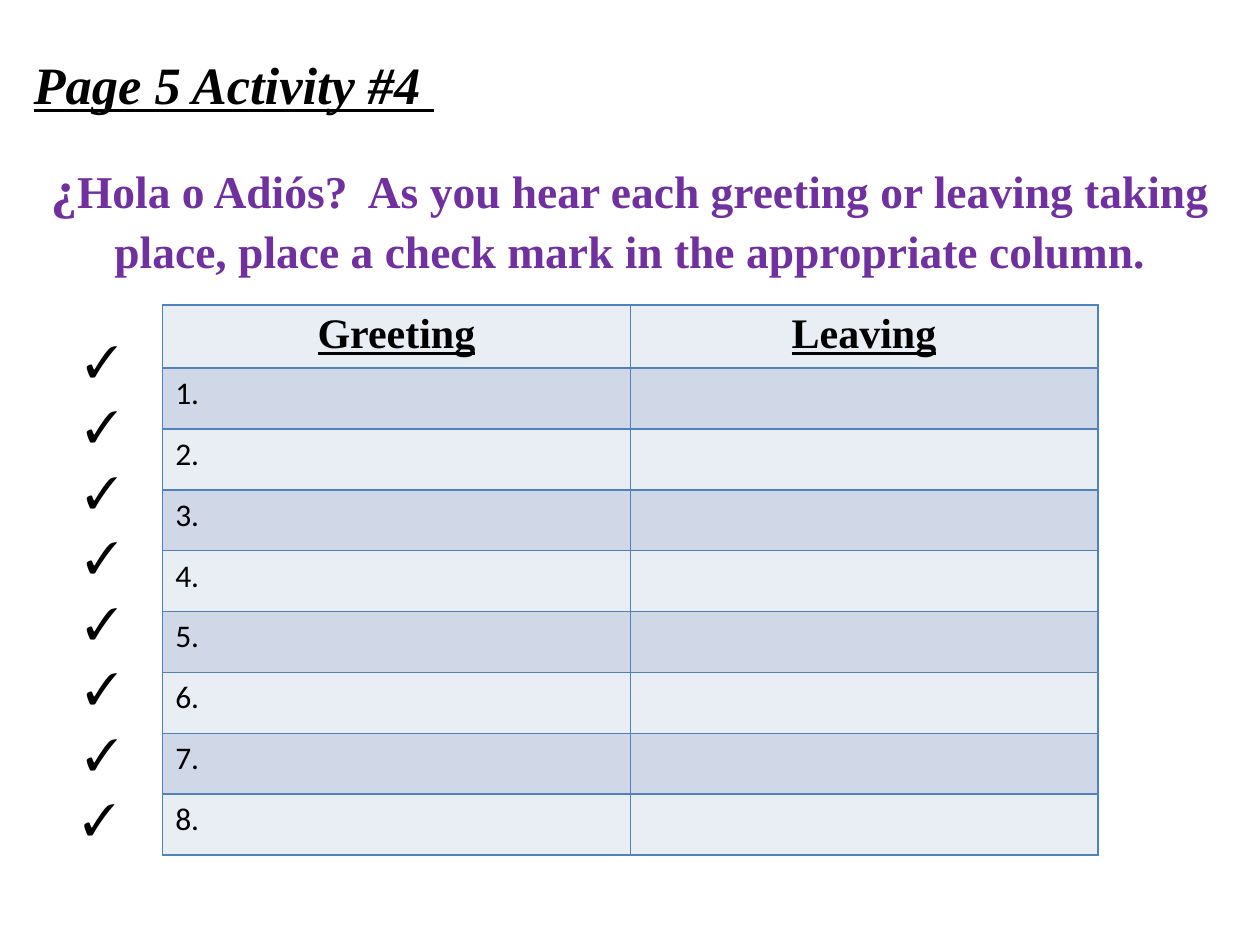
from pptx import Presentation
from pptx.dml.color import RGBColor
from pptx.enum.text import PP_ALIGN as Align
from pptx.oxml import parse_xml
from pptx.oxml.ns import nsdecls
from pptx.util import Cm, Pt

BLACK = RGBColor(0x00, 0x00, 0x00)
PURPLE = RGBColor(0x70, 0x30, 0xA0)
BORDER = RGBColor(0x4F, 0x81, 0xBD)
BANDS = RGBColor(0xE9, 0xED, 0xF4), RGBColor(0xD0, 0xD8, 0xE8)
SERIF = "Times New Roman"
QUESTIONS = 8
CHECK_STEP = 1.32


def style(span, size, color=BLACK, name=SERIF, bold=True, italic=False, underline=False):
    font = span.font
    font.size, font.name, font.color.rgb = Pt(size), name, color
    font.bold, font.italic, font.underline = bold, italic, underline


def add_heading(page, left, top, width, height):
    box = page.shapes.add_textbox(Cm(left), Cm(top), Cm(width), Cm(height))
    frame = box.text_frame
    frame.word_wrap = True
    frame.text = "Page 5 Activity #4 "
    title = frame.paragraphs[0]
    title.line_spacing = 1.07
    style(title.runs[0], 30, italic=True, underline=True)

    task = frame.add_paragraph()
    task.alignment = Align.CENTER
    task.line_spacing = 1.07
    task.space_before = Pt(21)
    for text, size in (
        ("¿", 30),
        ("Hola o Adiós?  As you hear each greeting or leaving taking place, "
         "place a check mark in the appropriate column.", 26),
    ):
        span = task.add_run()
        span.text = text
        style(span, size, PURPLE)


def add_borders(cell):
    """Draw a thin line on all four sides of the cell."""
    properties = cell._tc.get_or_add_tcPr()
    for index, side in enumerate(("lnL", "lnR", "lnT", "lnB")):
        properties.insert(index, parse_xml(
            f'<a:{side} {nsdecls("a")} w="{Pt(1)}"><a:solidFill>'
            f'<a:srgbClr val="{BORDER}"/></a:solidFill></a:{side}>'))


def add_answer_table(page, left, top, width, height):
    rows = [("Greeting", "Leaving")]
    rows += [(f"{number}.", "") for number in range(1, QUESTIONS + 1)]
    table = page.shapes.add_table(
        len(rows), 2, Cm(left), Cm(top), Cm(width), Cm(height)).table
    for row, texts in enumerate(rows):
        for column, text in enumerate(texts):
            cell = table.cell(row, column)
            cell.fill.solid()
            cell.fill.fore_color.rgb = BANDS[row % 2]
            add_borders(cell)
            para = cell.text_frame.paragraphs[0]
            para.text = text
            if row == 0:
                para.alignment = Align.CENTER
            for span in para.runs:
                if row == 0:
                    style(span, 24, underline=True)
                else:
                    style(span, 18, name="Calibri", bold=False)


def add_check_marks(page, left, top, width, height):
    for index in range(QUESTIONS):
        nudge = -0.05 if index == QUESTIONS - 1 else 0
        box = page.shapes.add_textbox(
            Cm(left + nudge), Cm(top + index * CHECK_STEP), Cm(width), Cm(height))
        box.text_frame.word_wrap = False
        box.text_frame.text = "✓"
        style(box.text_frame.paragraphs[0].runs[0], 25)


def main():
    deck = Presentation()
    deck.slide_width, deck.slide_height = Cm(25.4), Cm(19.05)
    page = deck.slides.add_slide(deck.slide_layouts[6])
    add_heading(page, 0.43, 0.84, 24.56, 4.7)
    add_answer_table(page, 3.28, 6.15, 18.85, 11.05)
    add_check_marks(page, 1.47, 6.6, 1.22, CHECK_STEP)
    deck.save("out.pptx")


if __name__ == "__main__":
    main()
